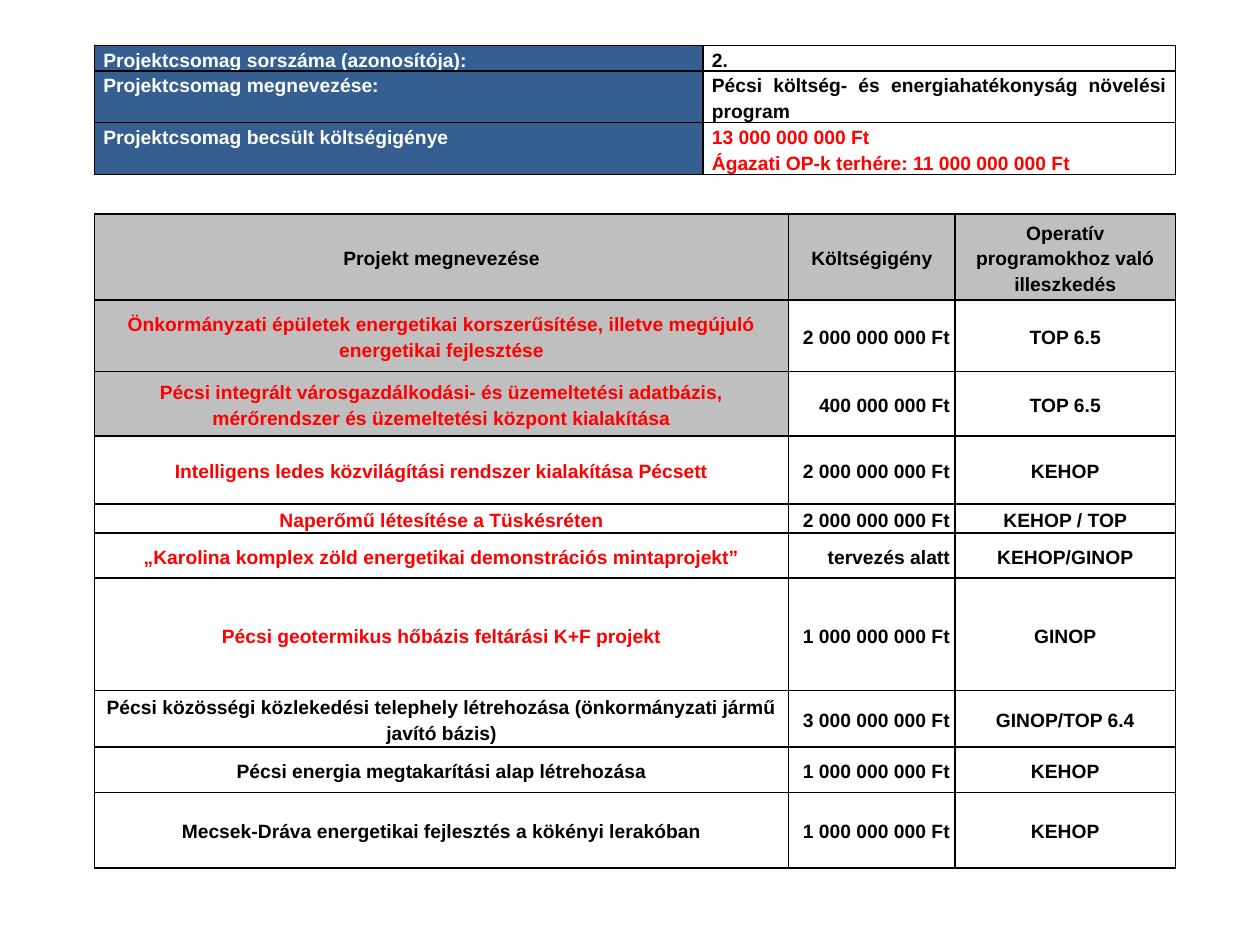
from lxml import etree
from pptx import Presentation
from pptx import util as u
from pptx.dml.color import RGBColor
from pptx.enum import text
from pptx.oxml.ns import qn

BLUE, GRAY, WHITE = "365F91", "BFBFBF", "FFFFFF"
BLACK, RED = "000000", "FF0000"
LEFT = 0.75

SUMMARY = [
    ("Projektcsomag sorszáma (azonosítója):", "2.", BLACK, 0.2),
    ("Projektcsomag megnevezése:",
     "Pécsi költség- és energiahatékonyság növelési program", BLACK, 0.41),
    ("Projektcsomag becsült költségigénye",
     "13 000 000 000 Ft\nÁgazati OP-k terhére: 11 000 000 000 Ft", RED, 0.41),
]
HEADER = ("Projekt megnevezése", "Költségigény",
          "Operatív programokhoz való illeszkedés")
PROJECTS = [
    ("Önkormányzati épületek energetikai korszerűsítése, illetve megújuló energetikai fejlesztése",
     "2 000 000 000 Ft", "TOP 6.5", RED, GRAY, 0.57),
    ("Pécsi integrált városgazdálkodási- és üzemeltetési adatbázis, mérőrendszer és üzemeltetési központ kialakítása",
     "400 000 000 Ft", "TOP 6.5", RED, GRAY, 0.51),
    ("Intelligens ledes közvilágítási rendszer kialakítása Pécsett",
     "2 000 000 000 Ft", "KEHOP", RED, WHITE, 0.54),
    ("Naperőmű létesítése a Tüskésréten",
     "2 000 000 000 Ft", "KEHOP / TOP", RED, WHITE, 0.23),
    ("„Karolina komplex zöld energetikai demonstrációs mintaprojekt”",
     "tervezés alatt", "KEHOP/GINOP", RED, WHITE, 0.36),
    ("Pécsi geotermikus hőbázis feltárási K+F projekt",
     "1 000 000 000 Ft", "GINOP", RED, WHITE, 0.89),
    ("Pécsi közösségi közlekedési telephely létrehozása (önkormányzati jármű javító bázis)",
     "3 000 000 000 Ft", "GINOP/TOP 6.4", BLACK, WHITE, 0.45),
    ("Pécsi energia megtakarítási alap létrehozása",
     "1 000 000 000 Ft", "KEHOP", BLACK, WHITE, 0.36),
    ("Mecsek-Dráva energetikai fejlesztés a kökényi lerakóban",
     "1 000 000 000 Ft", "KEHOP", BLACK, WHITE, 0.6),
]


def color(value):
    return RGBColor.from_string(value)


def add_borders(cell):
    properties = cell._tc.get_or_add_tcPr()
    for index, side in enumerate(("lnL", "lnR", "lnT", "lnB")):
        line = etree.Element(qn(f"a:{side}"), w=str(u.Pt(1)))
        fill = etree.SubElement(line, qn("a:solidFill"))
        etree.SubElement(fill, qn("a:srgbClr"), val=BLACK)
        properties.insert(index, line)


def fill_cell(cell, words, ink, fill, align, anchor, margin, gap):
    cell.margin_left = cell.margin_right = u.Inches(margin)
    cell.margin_top = cell.margin_bottom = 0
    cell.vertical_anchor = anchor
    cell.fill.solid()
    cell.fill.fore_color.rgb = color(fill)
    add_borders(cell)
    cell.text_frame.text = words
    for para in cell.text_frame.paragraphs:
        para.alignment = align
        para.line_spacing = 1.2
        para.space_before = para.space_after = u.Pt(gap)
        for span in para.runs:
            span.font.name = "Arial"
            span.font.size = u.Pt(11)
            span.font.bold = True
            span.font.color.rgb = color(ink)


def add_grid(slide, top, widths, heights, cells, anchor, margin, gap):
    frame = slide.shapes.add_table(
        len(heights), len(widths), u.Inches(LEFT), u.Inches(top),
        u.Inches(sum(widths)), u.Inches(sum(heights)))
    table = frame.table
    for column, width in zip(table.columns, widths):
        column.width = u.Inches(width)
    for row, height, contents in zip(table.rows, heights, cells):
        row.height = u.Inches(height)
        for cell, content in zip(row.cells, contents):
            fill_cell(cell, *content, anchor, margin, gap)


def main():
    deck = Presentation()
    deck.slide_width, deck.slide_height = u.Inches(10), u.Inches(7.5)
    slide = deck.slides.add_slide(deck.slide_layouts[6])
    justify = text.PP_ALIGN.JUSTIFY
    center, right = text.PP_ALIGN.CENTER, text.PP_ALIGN.RIGHT

    summary_cells = [
        [(label, WHITE, BLUE, justify), (value, ink, WHITE, justify)]
        for label, value, ink, _ in SUMMARY]
    add_grid(slide, 0.36, [4.83, 3.75], [row[-1] for row in SUMMARY],
             summary_cells, text.MSO_ANCHOR.TOP, 0.07, 0)

    project_cells = [[(title, BLACK, GRAY, center) for title in HEADER]]
    for name, cost, program, ink, fill, _ in PROJECTS:
        project_cells.append([(name, ink, fill, center),
                              (cost, BLACK, WHITE, right),
                              (program, BLACK, WHITE, center)])
    add_grid(slide, 1.7, [5.51, 1.32, 1.75],
             [0.68] + [row[-1] for row in PROJECTS],
             project_cells, text.MSO_ANCHOR.MIDDLE, 0.04, 6)
    deck.save("out.pptx")


if __name__ == "__main__":
    main()
